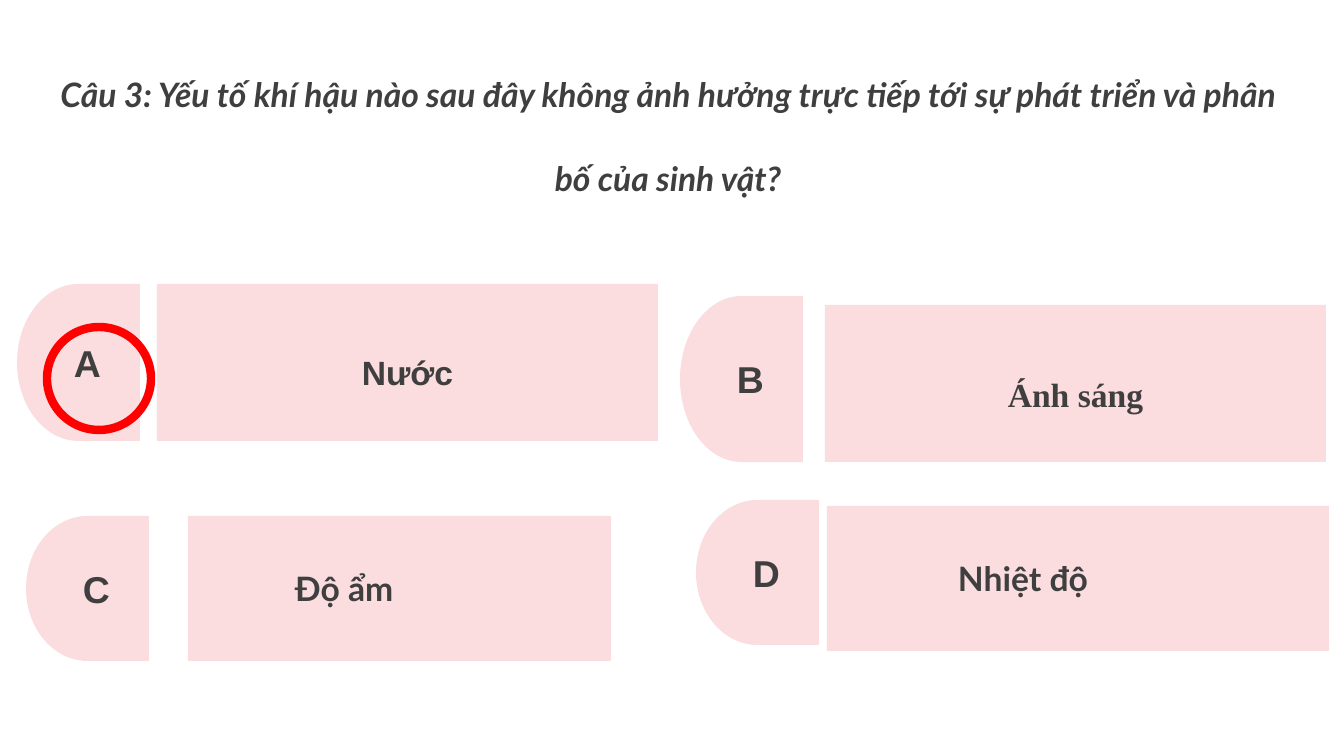
from pptx import Presentation
from pptx.dml.color import RGBColor
from pptx.enum.shapes import MSO_SHAPE as Preset
from pptx.enum.text import MSO_ANCHOR as Anchor, PP_ALIGN as Align
from pptx.util import Emu, Pt

PX = 914400 / 100.8
PINK, INK, RED = "FBDDE0", "3F3F3F", "FF0000"
BADGE_WIDTH = 123


def px(length):
    return Emu(round(length * PX))


def color(value):
    return RGBColor.from_string(value)


def add_preset(slide, preset, box):
    shape = slide.shapes.add_shape(preset, *map(px, box))
    shape.shadow.inherit = False
    return shape


def set_text(shape, text, font, size, align=Align.CENTER, spacing=None):
    frame = shape.text_frame
    frame.word_wrap = True
    paragraph = frame.paragraphs[0]
    paragraph.text = text
    paragraph.alignment = align
    paragraph.line_spacing = spacing
    paragraph.font.name = font
    paragraph.font.size = Pt(size)
    paragraph.font.bold = True
    paragraph.font.color.rgb = color(INK)
    return frame


def add_panel(slide, preset, box):
    panel = add_preset(slide, preset, box)
    panel.fill.solid()
    panel.fill.fore_color.rgb = color(PINK)
    panel.line.fill.background()
    panel.text_frame.vertical_anchor = Anchor.MIDDLE
    return panel


def add_question(slide, box, text):
    question = slide.shapes.add_textbox(*map(px, box))
    frame = set_text(question, text, "Lato", 24, spacing=Pt(59.7))
    frame.margin_left = frame.margin_right = 0
    frame.margin_top = frame.margin_bottom = 0
    frame.paragraphs[0].font.italic = True


def add_answer(slide, box, letter, text, font, bar_offset, bar_height, indent):
    left, top, width, height = box
    # Letter badge, rounded on the left
    badge = add_panel(slide, Preset.FLOWCHART_DELAY, (left, top, BADGE_WIDTH, height))
    badge._element.spPr.xfrm.set("flipH", "1")
    set_text(badge, letter, "Arial", 26.7)
    # Answer bar: centred, or left-aligned after an indent
    dx, dy = bar_offset
    bar = add_panel(slide, Preset.RECTANGLE, (left + dx, top + dy, width - dx, bar_height))
    if indent:
        set_text(bar, text, font, 24, Align.LEFT).margin_left = px(indent)
    else:
        set_text(bar, text, font, 24, spacing=1.5)


def add_answer_ring(slide, box):
    ring = add_preset(slide, Preset.OVAL, box)
    ring.fill.background()
    ring.line.color.rgb = color(RED)
    ring.line.width = Pt(6)


def main():
    presentation = Presentation()
    presentation.slide_width, presentation.slide_height = px(1344), px(756)
    slide = presentation.slides.add_slide(presentation.slide_layouts[6])

    add_question(slide, (43, 31, 1250, 157),
                 "Câu 3: Yếu tố khí hậu nào sau đây không ảnh hưởng trực tiếp "
                 "tới sự phát triển và phân bố của sinh vật?")

    # Box, letter, text, font, bar offset, bar height, text indent
    answers = [
        ((17, 284, 641, 157), "A", "Nước", "Arial", (140, 0), 157, 0),
        ((680, 296, 646, 166), "B", "Ánh sáng", "Times New Roman", (145, 9), 157, 0),
        ((26, 516, 585, 145), "C", "Độ ẩm", "Lato", (162, 0), 145, 107),
        ((696, 500, 633, 145), "D", "Nhiệt độ", "Lato", (131, 6), 145, 131),
    ]
    for answer in answers:
        add_answer(slide, *answer)
    add_answer_ring(slide, (47, 327, 104, 103))

    presentation.save("out.pptx")


if __name__ == "__main__":
    main()
